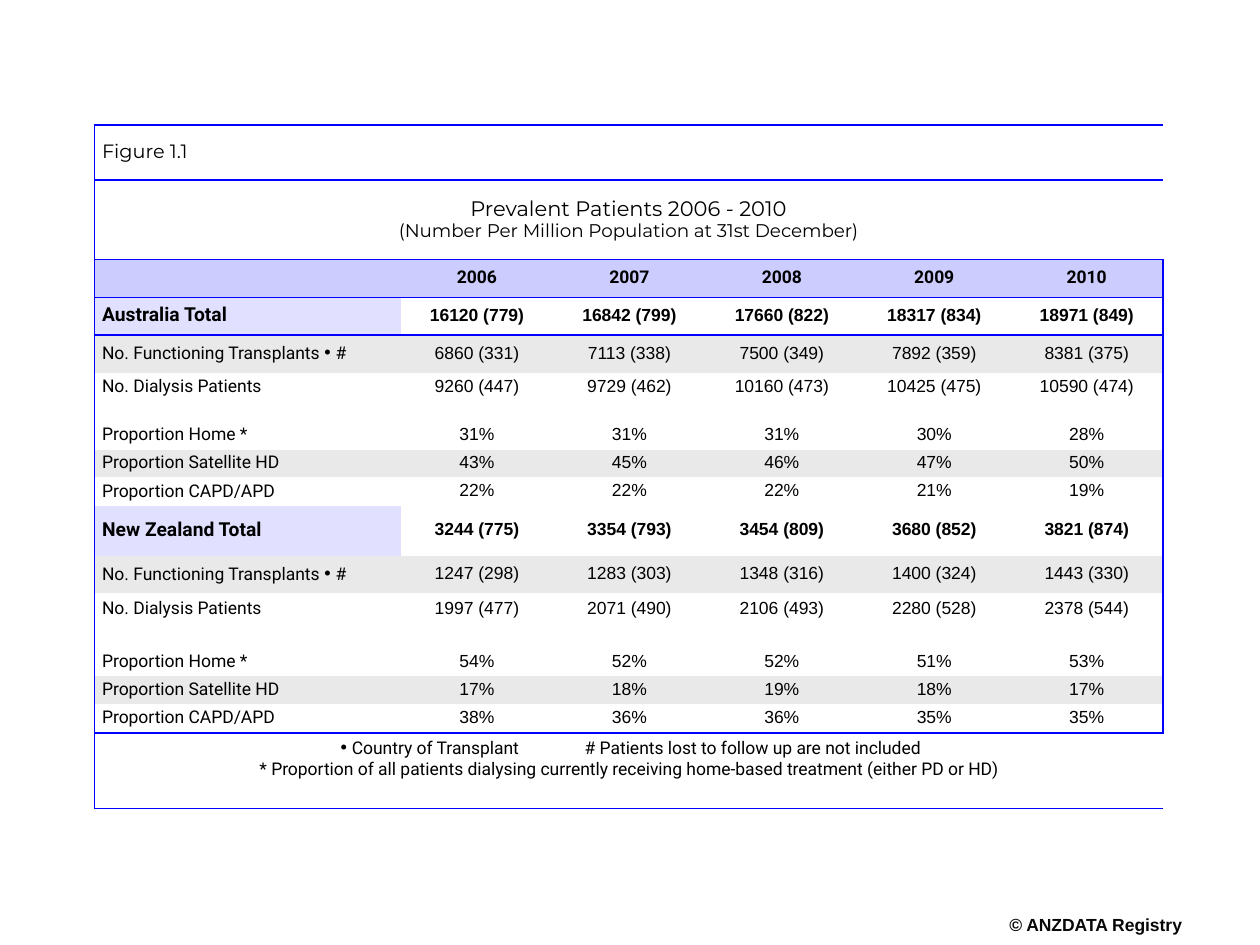
from lxml.etree import SubElement
from pptx import Presentation
from pptx.dml.color import RGBColor
from pptx.enum.text import MSO_ANCHOR, PP_ALIGN
from pptx.oxml.ns import qn
from pptx.util import Inches, Pt

BLACK, BLUE = "000000", "0000FF"
HEADER_FILL, TOTAL_FILL, BAND_FILL = "CCCCFF", "E1E1FF", "E9E9E9"
NO_GRID_STYLE = "{2D5ABB26-0587-4C30-8999-92F81FD0307C}"

COLUMN_WIDTHS = [2.43] + [1.21] * 5
PROPORTION_HEIGHTS = [0.23, 0.22, 0.23]
ROW_HEIGHTS = [0.44, 0.63, 0.3,
               0.3, 0.3, 0.23, 0.15, *PROPORTION_HEIGHTS,
               0.39, 0.3, 0.25, 0.18, *PROPORTION_HEIGHTS,
               0.6]
LAST_ROW = len(ROW_HEIGHTS) - 1
RULED_ROWS = {0, 1, 2, 3, LAST_ROW, LAST_ROW + 1}
HEADER_ROW = 2

YEARS = ["2006", "2007", "2008", "2009", "2010"]
TRANSPLANTS = "No. Functioning Transplants • #"
DIALYSIS = "No. Dialysis Patients"
HOME = "Proportion Home *"
SATELLITE = "Proportion Satellite HD"
CAPD = "Proportion CAPD/APD"
COUNTRIES = {
    3: [
        ("Australia Total", ["16120 (779)", "16842 (799)", "17660 (822)", "18317 (834)", "18971 (849)"]),
        (TRANSPLANTS, ["6860 (331)", "7113 (338)", "7500 (349)", "7892 (359)", "8381 (375)"]),
        (DIALYSIS, ["9260 (447)", "9729 (462)", "10160 (473)", "10425 (475)", "10590 (474)"]),
        None,
        (HOME, ["31%", "31%", "31%", "30%", "28%"]),
        (SATELLITE, ["43%", "45%", "46%", "47%", "50%"]),
        (CAPD, ["22%", "22%", "22%", "21%", "19%"]),
    ],
    10: [
        ("New Zealand Total", ["3244 (775)", "3354 (793)", "3454 (809)", "3680 (852)", "3821 (874)"]),
        (TRANSPLANTS, ["1247 (298)", "1283 (303)", "1348 (316)", "1400 (324)", "1443 (330)"]),
        (DIALYSIS, ["1997 (477)", "2071 (490)", "2106 (493)", "2280 (528)", "2378 (544)"]),
        None,
        (HOME, ["54%", "52%", "52%", "51%", "53%"]),
        (SATELLITE, ["17%", "18%", "19%", "18%", "17%"]),
        (CAPD, ["38%", "36%", "36%", "35%", "35%"]),
    ],
}


def color(value):
    return RGBColor.from_string(value)


def add_run(paragraph, text, size, font="Roboto", bold=False, ink=BLACK):
    run = paragraph.add_run()
    run.text = text
    run.font.size, run.font.name, run.font.bold = Pt(size), font, bold
    run.font.color.rgb = color(ink)


def add_bulleted_text(paragraph, text, size, bold=False):
    """Write text in Roboto, with any bullet sign larger and in Times New Roman."""
    before, bullet, after = text.partition("•")
    if before:
        add_run(paragraph, before, size, bold=bold)
    if bullet:
        add_run(paragraph, bullet, 12, "Times New Roman")
        add_run(paragraph, after, size, bold=bold)


def format_paragraph(paragraph, alignment=PP_ALIGN.CENTER):
    paragraph.alignment = alignment
    paragraph.line_spacing = 0.85
    return paragraph


def add_tab_stops(paragraph, positions):
    tab_list = SubElement(paragraph._p.get_or_add_pPr(), qn("a:tabLst"))
    for position in positions:
        SubElement(tab_list, qn("a:tab"), pos=str(Inches(position)), algn="l")


def add_border(cell, side):
    line = SubElement(cell._tc.get_or_add_tcPr(), qn(f"a:ln{side}"), w=str(Pt(1)))
    fill = SubElement(line, qn("a:solidFill"))
    SubElement(fill, qn("a:srgbClr"), val=BLUE)


def prepare_cell(cell, row, column):
    """Set margins, anchor and borders, and keep empty text from stretching the row."""
    cell.margin_left = cell.margin_right = Inches(0.02)
    cell.margin_top = cell.margin_bottom = Inches(0 if row == LAST_ROW else 0.02)
    cell.vertical_anchor = MSO_ANCHOR.MIDDLE
    cell.text_frame.paragraphs[0]._p.get_or_add_endParaRPr().set("sz", "500")
    borders = {
        "L": column == 0,
        "R": column == len(COLUMN_WIDTHS) - 1,
        "T": row in RULED_ROWS,
        "B": row + 1 in RULED_ROWS,
    }
    for side, drawn in borders.items():
        if drawn:
            add_border(cell, side)


def fill_cell(cell, value):
    cell.fill.solid()
    cell.fill.fore_color.rgb = color(value)


def write_label(cell, text, size=10, bold=False):
    cell.margin_left = Inches(0.06)
    paragraph = format_paragraph(cell.text_frame.paragraphs[0], PP_ALIGN.LEFT)
    add_bulleted_text(paragraph, text, size, bold)


def write_value(cell, text, font="Arial", bold=False):
    add_run(format_paragraph(cell.text_frame.paragraphs[0]), text, 10, font, bold)


def write_country(table, first_row, entries):
    for row, entry in enumerate(entries, first_row):
        if entry is None:
            continue
        label, values = entry
        is_total = row == first_row
        cells = list(table.rows[row].cells)
        write_label(cells[0], label, 11 if is_total else 10, is_total)
        for cell, value in zip(cells[1:], values):
            write_value(cell, value, bold=is_total)
        if is_total:
            fill_cell(cells[0], TOTAL_FILL)
        elif label in (TRANSPLANTS, SATELLITE):
            for cell in cells:
                fill_cell(cell, BAND_FILL)


def write_titles(table):
    figure_cell, title_cell = table.cell(0, 0), table.cell(1, 0)
    figure_cell.margin_left = Inches(0.06)
    paragraph = format_paragraph(figure_cell.text_frame.paragraphs[0], PP_ALIGN.LEFT)
    add_run(paragraph, "Figure 1.1", 11, "Montserrat")

    frame = title_cell.text_frame
    add_run(format_paragraph(frame.paragraphs[0]), "Prevalent Patients 2006 - 2010", 12, "Montserrat")
    subtitle = format_paragraph(frame.add_paragraph())
    subtitle.space_before, subtitle.space_after = Pt(1), Pt(6)
    add_run(subtitle, "(Number Per Million Population at 31st December)", 10.5, "Montserrat")


def write_header(table):
    cells = list(table.rows[HEADER_ROW].cells)
    for cell in cells:
        fill_cell(cell, HEADER_FILL)
    for cell, year in zip(cells[1:], YEARS):
        write_value(cell, year, "Roboto", True)


def write_footnotes(table):
    cell = table.cell(LAST_ROW, 0)
    cell.vertical_anchor = MSO_ANCHOR.TOP
    cell.margin_top = Inches(0.04)
    first = format_paragraph(cell.text_frame.paragraphs[0], PP_ALIGN.LEFT)
    add_tab_stops(first, [1.93, 3.87])
    add_bulleted_text(first, "\t• Country of Transplant\t# Patients lost to follow up are not included", 10)
    second = format_paragraph(cell.text_frame.add_paragraph())
    second.space_before = Pt(2)
    add_run(second, "* Proportion of all patients dialysing currently receiving "
                    "home-based treatment (either PD or HD)", 10)


def add_patient_table(slide):
    frame = slide.shapes.add_table(
        len(ROW_HEIGHTS), len(COLUMN_WIDTHS), Inches(0.75), Inches(0.99),
        Inches(sum(COLUMN_WIDTHS)), Inches(sum(ROW_HEIGHTS)))
    table = frame.table
    table.first_row = table.horz_banding = False
    table._tbl.tblPr.find(qn("a:tableStyleId")).text = NO_GRID_STYLE
    for column, width in zip(table.columns, COLUMN_WIDTHS):
        column.width = Inches(width)
    for row_index, (row, height) in enumerate(zip(table.rows, ROW_HEIGHTS)):
        row.height = Inches(height)
        for column_index, cell in enumerate(row.cells):
            prepare_cell(cell, row_index, column_index)
    for row in (0, 1, LAST_ROW):
        table.cell(row, 0).merge(table.cell(row, len(COLUMN_WIDTHS) - 1))
    return table


def add_copyright(slide):
    frame = slide.shapes.add_textbox(Inches(7.99), Inches(7.28), Inches(1.41), Inches(0.17)).text_frame
    frame.margin_left = frame.margin_right = frame.margin_top = frame.margin_bottom = 0
    frame.word_wrap = False
    add_run(format_paragraph(frame.paragraphs[0]), "© ANZDATA Registry", 10, "Arial", True, "080808")


def main():
    presentation = Presentation()
    presentation.slide_width, presentation.slide_height = Inches(10), Inches(7.5)
    slide = presentation.slides.add_slide(presentation.slide_layouts[6])
    add_copyright(slide)
    table = add_patient_table(slide)
    write_titles(table)
    write_header(table)
    for first_row, entries in COUNTRIES.items():
        write_country(table, first_row, entries)
    write_footnotes(table)
    presentation.save("out.pptx")


if __name__ == "__main__":
    main()
